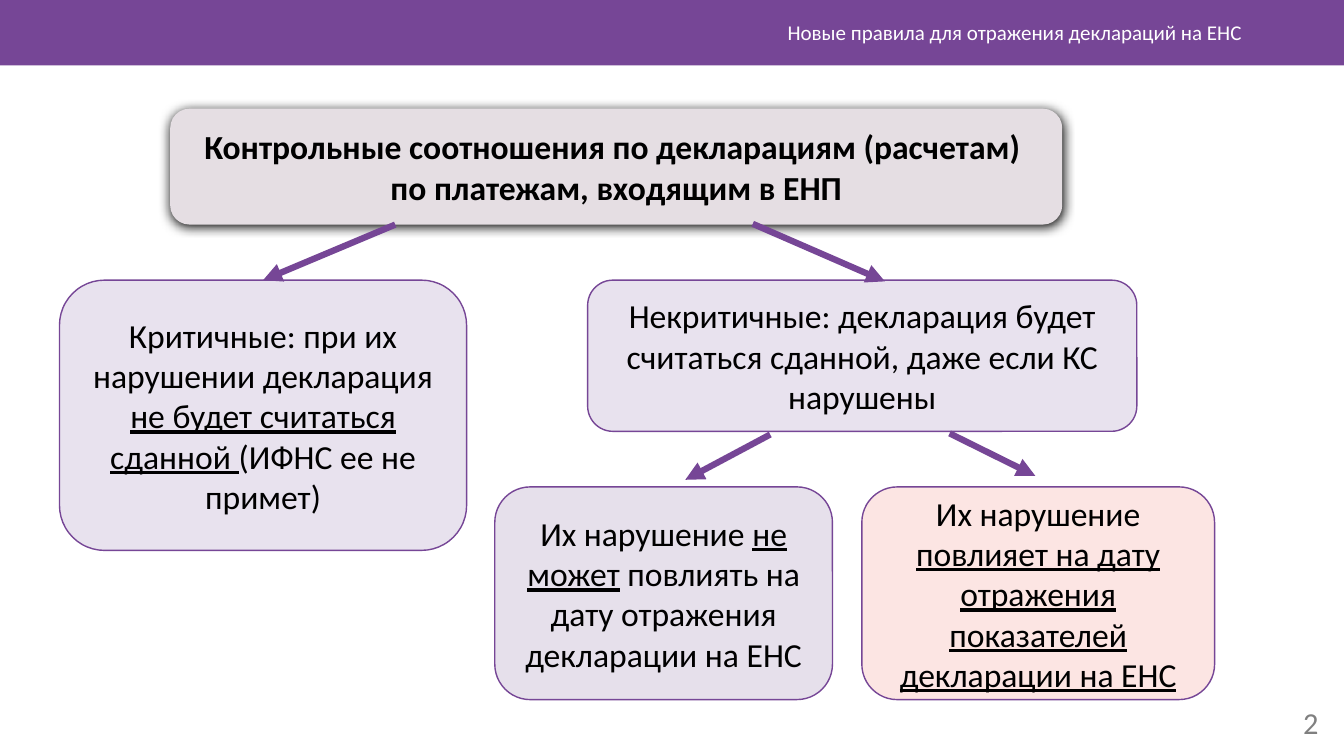
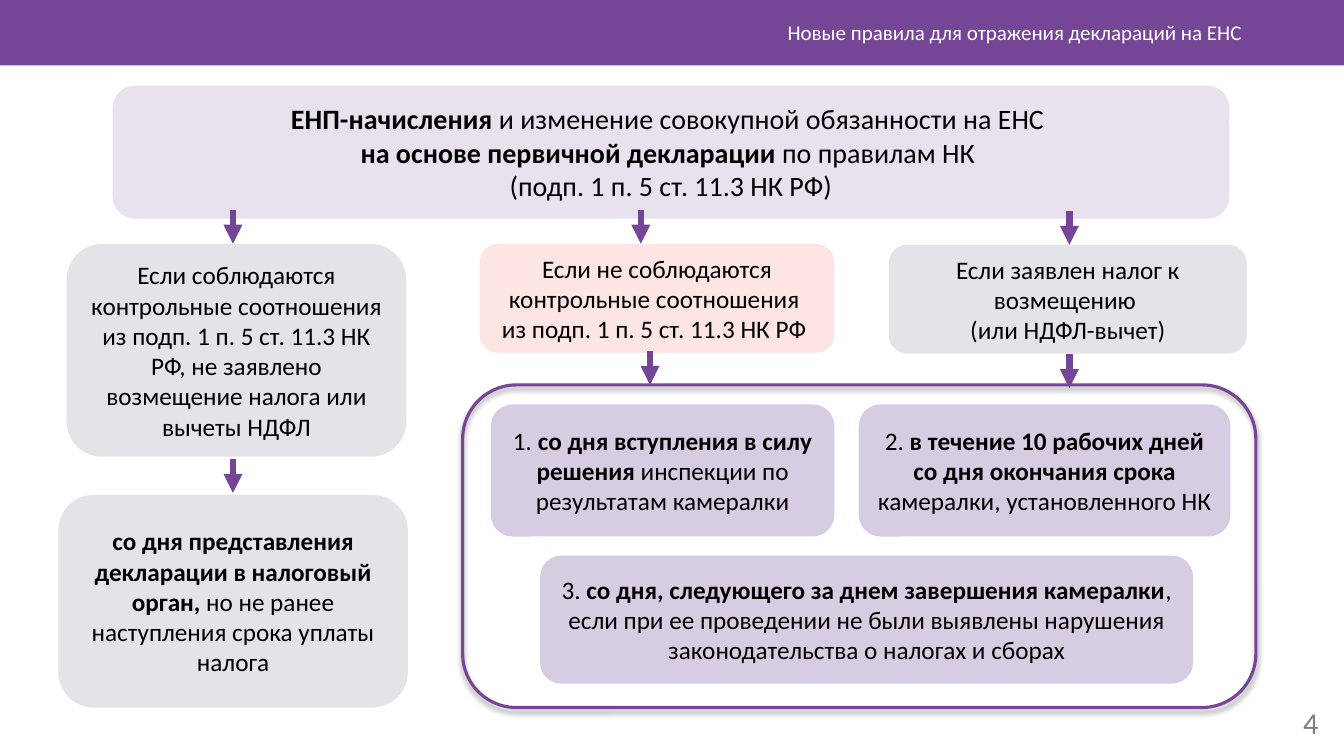
from lxml import etree
from pptx import Presentation
from pptx.dml.color import RGBColor
from pptx.enum.shapes import MSO_CONNECTOR, MSO_SHAPE
from pptx.enum.text import MSO_ANCHOR, PP_ALIGN
from pptx.oxml.ns import qn
from pptx.util import Cm, Pt

RECT, ROUND = MSO_SHAPE.RECTANGLE, MSO_SHAPE.ROUNDED_RECTANGLE
STRAIGHT = MSO_CONNECTOR.STRAIGHT
CENTER, RIGHT = PP_ALIGN.CENTER, PP_ALIGN.RIGHT
MIDDLE = MSO_ANCHOR.MIDDLE

FONT = "Calibri"
TITLE = "Новые правила для отражения деклараций на ЕНС"
COLORS = {
    "purple": "764696",
    "lilac": "E8E2EE",
    "mist": "E6E0EB",
    "violet": "D7CDE2",
    "mauve": "E5DEE3",
    "pink": "FCE5E3",
    "gray": "E4E4E8",
    "number": "808080",
    "white": "FFFFFF",
    "black": "000000",
}
RGB = {name: RGBColor.from_string(value) for name, value in COLORS.items()}

# Each box: position (cm), fill, outline (pt), shadow, text size, paragraphs.
# A shadow is (opacity %, blur pt, distance pt).
# A paragraph is a list of (text, style) runs: "b" is bold, "u" underlined.
# Each arrow: x1, y1, x2, y2 (cm).
DROP = 0.86     # length of the vertical arrows

slides = [
    {
        "number": "2",
        "boxes": [
            ((4.29, 2.74, 22.48, 2.92), "mauve", 0, (100, 8.5, 1), 24, [
                [("Контрольные соотношения по декларациям (расчетам) ", "b")],
                [("по платежам, входящим в ЕНП", "b")],
            ]),
            ((1.5, 7.06, 10.26, 6.81), "lilac", 1, None, 24, [
                [("Критичные: при их нарушении декларация ", ""),
                 ("не будет считаться сданной ", "u"),
                 ("(ИФНС ее не примет)", "")],
            ]),
            ((14.81, 7.06, 13.84, 3.81), "lilac", 1, None, 24, [
                [("Некритичные: декларация будет считаться сданной, "
                  "даже если КС нарушены", "")],
            ]),
            ((12.47, 12.27, 8.51, 5.36), "mist", 1, None, 24, [
                [("Их нарушение ", ""),
                 ("не может", "u"),
                 (" повлиять на дату отражения декларации на ЕНС", "")],
            ]),
            ((21.72, 12.27, 8.89, 5.36), "pink", 1, None, 24, [
                [("Их нарушение ", ""),
                 ("повлияет на дату отражения показателей "
                  "декларации на ЕНС", "u")],
            ]),
        ],
        "arrows": [
            (9.96, 5.66, 6.63, 7.06),
            (18.97, 5.64, 22.3, 7.09),
            (19.41, 10.95, 17.27, 12.09),
            (23.93, 10.92, 26.09, 11.99),
        ],
    },
    {
        "number": "4",
        "boxes": [
            ((2.84, 2.16, 28.14, 3.35), "lilac", 0, None, 20, [
                [("ЕНП-начисления", "b"),
                 (" и изменение совокупной обязанности на ЕНС ", "")],
                [("на основе первичной декларации ", "b"),
                 ("по правилам НК ", "")],
                [("(подп. 1 п. 5 ст. 11.3 НК РФ)", "")],
            ]),
            ((1.68, 6.15, 8.56, 5.36), "gray", 0, None, 18, [
                [("Если соблюдаются контрольные соотношения из подп. 1 п. 5 "
                  "ст. 11.3 НК РФ, не заявлено возмещение налога или "
                  "вычеты НДФЛ", "")],
            ]),
            ((12.09, 6.15, 8.94, 2.74), "pink", 0, None, 18, [
                [("Если не соблюдаются контрольные соотношения ", "")],
                [("из подп. 1 п. 5 ст. 11.3 НК РФ ", "")],
            ]),
            ((22.4, 6.17, 9.02, 2.74), "gray", 0, None, 18, [
                [("Если заявлен налог к возмещению ", "")],
                [("(или НДФЛ-вычет)", "")],
            ]),
            ((1.47, 12.47, 8.81, 5.36), "gray", 0, None, 18, [
                [("со дня представления декларации в налоговый орган,", "b"),
                 (" но не ранее наступления срока уплаты налога", "")],
            ]),
            # Frame around the three numbered options
            ((11.66, 9.7, 19.99, 8.13), None, 2.25, (40, 4, 3), 18, []),
            ((12.37, 10.19, 8.66, 3.33), "violet", 0, None, 18, [
                [("1. ", ""),
                 ("со дня вступления в силу решения", "b"),
                 (" инспекции по результатам камералки", "")],
            ]),
            ((21.64, 10.19, 9.37, 3.33), "violet", 0, None, 18, [
                [("2. ", ""),
                 ("в течение 10 рабочих дней со дня окончания срока ", "b"),
                 ("камералки, установленного НК", "")],
            ]),
            ((13.61, 14, 16.46, 3.23), "violet", 0, None, 18, [
                [("3. ", ""),
                 ("со дня, следующего за днем завершения камералки", "b"),
                 (", если при ее проведении не были выявлены нарушения "
                  "законодательства о налогах и сборах", "")],
            ]),
        ],
        "arrows": [
            (x, y, x, y + DROP)
            for x, y in [(5.87, 5.28), (16.15, 5.28), (26.95, 5.31),
                         (5.87, 11.56), (16.38, 8.84), (26.95, 8.92)]
        ],
    },
]


def add_text(sp, paragraphs, size, color, align):
    tf = sp.text_frame
    tf.word_wrap = True
    tf.vertical_anchor = MIDDLE
    for i, runs in enumerate(paragraphs):
        p = tf.add_paragraph() if i else tf.paragraphs[0]
        p.alignment = align
        for text, style in runs:
            r = p.add_run()
            r.text = text
            r.font.name = FONT
            r.font.size = Pt(size)
            r.font.color.rgb = RGB[color]
            r.font.bold = style == "b"
            r.font.underline = style == "u"


def add_shape(s, kind, place, fill, outline=0):
    sp = s.shapes.add_shape(kind, *map(Cm, place))
    sp.shadow.inherit = False
    if fill:
        sp.fill.solid()
        sp.fill.fore_color.rgb = RGB[fill]
    else:
        sp.fill.background()
    if outline:
        sp.line.color.rgb = RGB["purple"]
        sp.line.width = Pt(outline)
    else:
        sp.line.fill.background()
    return sp


prs = Presentation()
prs.slide_width, prs.slide_height = Cm(33.87), Cm(19.05)

for content in slides:
    s = prs.slides.add_slide(prs.slide_layouts[6])

    # Band, title and slide number
    add_shape(s, RECT, (0, 0, 33.87, 1.65), "purple")
    for text, place, size, color in [
        (TITLE, (8.99, 0.3, 22.56, 1.02), 15, "white"),
        (content["number"], (31.78, 17.7, 1.7, 1.02), 21.7, "number"),
    ]:
        sp = s.shapes.add_textbox(*map(Cm, place))
        add_text(sp, [[(text, "")]], size, color, RIGHT)

    # Boxes
    for place, fill, outline, shadow, size, paragraphs in content["boxes"]:
        sp = add_shape(s, ROUND, place, fill, outline)
        add_text(sp, paragraphs, size, "black", CENTER)
        if shadow:
            opacity, blur, distance = shadow
            effects = sp._element.spPr.find(qn("a:effectLst"))
            outer = etree.SubElement(
                effects, qn("a:outerShdw"), blurRad=str(Pt(blur)),
                dist=str(Pt(distance)), dir="5400000",
                algn="ctr", rotWithShape="0")
            clr = etree.SubElement(outer, qn("a:srgbClr"), val=COLORS["black"])
            etree.SubElement(clr, qn("a:alpha"), val=str(opacity * 1000))

    # Arrows
    for ends in content["arrows"]:
        line = s.shapes.add_connector(STRAIGHT, *map(Cm, ends))
        line.line.color.rgb = RGB["purple"]
        line.line.width = Pt(4.5)
        etree.SubElement(line.line._get_or_add_ln(), qn("a:tailEnd"),
                         type="triangle")
        etree.SubElement(line._element.spPr, qn("a:effectLst"))

prs.save("out.pptx")
